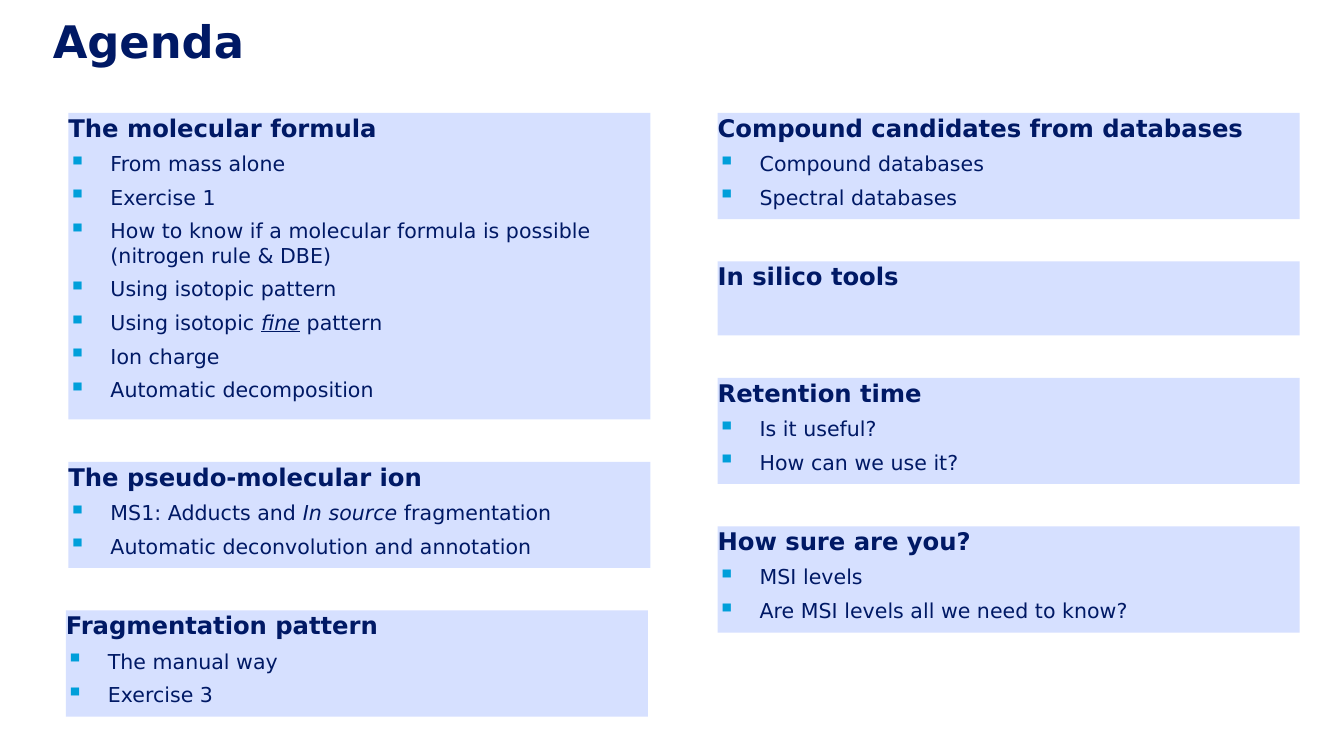
from lxml import etree
from pptx import Presentation
from pptx.dml.color import RGBColor
from pptx.enum.shapes import MSO_SHAPE
from pptx.enum.text import MSO_ANCHOR, PP_ALIGN
from pptx.oxml.ns import qn
from pptx.util import Pt

RECTANGLE = MSO_SHAPE.RECTANGLE
TOP, MIDDLE = MSO_ANCHOR.TOP, MSO_ANCHOR.MIDDLE
LEFT = PP_ALIGN.LEFT

NAVY = RGBColor(0x00, 0x19, 0x65)
PALE_BLUE = RGBColor(0xD6, 0xE0, 0xFF)
BULLET_BLUE = RGBColor(0x00, 0x9F, 0xDA)
FONT = "DejaVu Sans"

PLAIN, ITALIC, UNDERLINED_ITALIC = (False, False), (True, False), (True, True)

# Each column: left edge, then topics as (heading, height, shift, items)
COLUMNS = [
    (36.7, [
        ("The molecular formula", 164.2, 0, [
            "From mass alone",
            "Exercise 1",
            "How to know if a molecular formula is possible (nitrogen rule & DBE)",
            "Using isotopic pattern",
            [("Using isotopic ", PLAIN), ("fine", UNDERLINED_ITALIC), (" pattern", PLAIN)],
            "Ion charge",
            "Automatic decomposition",
        ]),
        ("The pseudo-molecular ion", 56.9, 0, [
            [("MS1: Adducts and ", PLAIN), ("In source", ITALIC), (" fragmentation", PLAIN)],
            "Automatic deconvolution and annotation",
        ]),
        ("Fragmentation pattern", 56.9, -1.4, ["The manual way", "Exercise 3"]),
    ]),
    (384.5, [
        ("Compound candidates from databases", 56.9, 0,
         ["Compound databases", "Spectral databases"]),
        ("In silico tools", 39.6, 0, []),
        ("Retention time", 56.9, 0, ["Is it useful?", "How can we use it?"]),
        ("How sure are you?", 56.9, 0,
         ["MSI levels", "Are MSI levels all we need to know?"]),
    ]),
]
CARD_TOP, CARD_WIDTH, CARD_GAP = 60.5, 311.8, 22.7
BULLET_INDENT = Pt(22.5)


def set_font(paragraph, size, bold):
    paragraph.alignment = LEFT
    font = paragraph.font
    font.name, font.size, font.bold = FONT, Pt(size), bold
    font.color.rgb = NAVY


def clear_margins(frame, anchor):
    frame.margin_left = frame.margin_right = frame.margin_top = frame.margin_bottom = 0
    frame.vertical_anchor = anchor
    frame.word_wrap = True


def add_bullet(paragraph):
    properties = paragraph._p.get_or_add_pPr()
    properties.set("marL", str(BULLET_INDENT))
    properties.set("indent", str(-BULLET_INDENT))
    color = etree.SubElement(properties, qn("a:buClr"))
    etree.SubElement(color, qn("a:srgbClr"), val=str(BULLET_BLUE))
    etree.SubElement(properties, qn("a:buSzPct"), val="120000")
    etree.SubElement(properties, qn("a:buChar"), char="▪")


def add_item(frame, item):
    paragraph = frame.add_paragraph()
    add_bullet(paragraph)
    paragraph.space_before = Pt(4.8)
    set_font(paragraph, 11, False)
    if isinstance(item, str):
        paragraph.text = item
        return
    for text, (italic, underline) in item:
        run = paragraph.add_run()
        run.text = text
        run.font.italic, run.font.underline = italic, underline


def add_card(slide, left, top, height, heading, items):
    card = slide.shapes.add_shape(RECTANGLE, Pt(left), Pt(top), Pt(CARD_WIDTH), Pt(height))
    card.shadow.inherit = False
    card.fill.solid()
    card.fill.fore_color.rgb = PALE_BLUE
    card.line.fill.background()
    frame = card.text_frame
    clear_margins(frame, TOP)
    paragraph = frame.paragraphs[0]
    paragraph.text = heading
    set_font(paragraph, 13, True)
    for item in items:
        add_item(frame, item)


def add_title(slide, text):
    title = slide.shapes.title
    title.left, title.top, title.width, title.height = Pt(0), Pt(0), Pt(720), Pt(72)
    frame = title.text_frame
    clear_margins(frame, MIDDLE)
    frame.margin_left, frame.margin_bottom = Pt(28.3), Pt(28)
    frame.text = text
    set_font(frame.paragraphs[0], 24, True)


def main():
    presentation = Presentation()
    presentation.slide_width, presentation.slide_height = Pt(720), Pt(405)
    slide = presentation.slides.add_slide(presentation.slide_layouts[5])
    add_title(slide, "Agenda")
    for left, topics in COLUMNS:
        top = CARD_TOP
        for heading, height, shift, items in topics:
            add_card(slide, left + shift, top, height, heading, items)
            top += height + CARD_GAP
    presentation.save("out.pptx")


if __name__ == "__main__":
    main()
